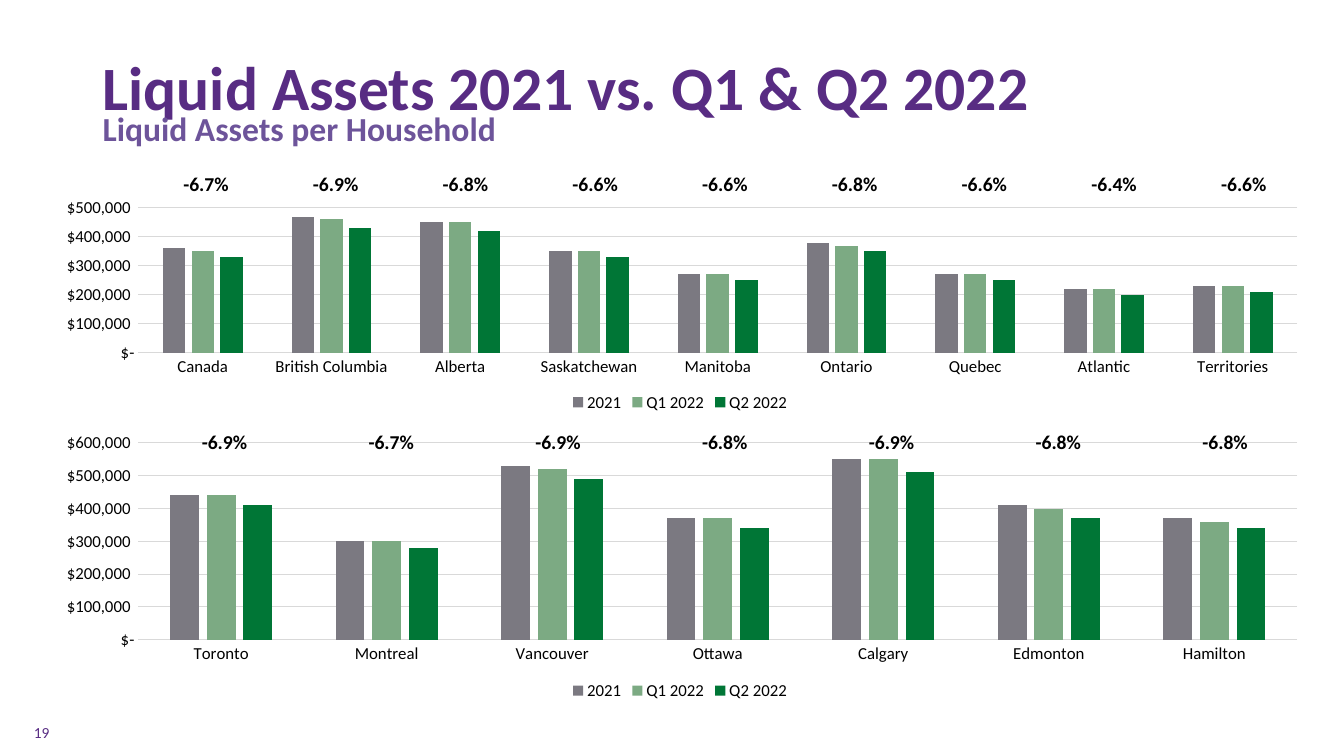
"""Build the slide comparing household liquid assets by region and by city."""
from dataclasses import dataclass

from pptx import Presentation
from pptx.chart import data
from pptx.dml import color
from pptx.enum import chart as charts, text
from pptx.util import Inches, Pt

FONT = "Calibri"
COLORS = {
    "title": "582C83",
    "subtitle": "6D549A",
    "text": "000000",
    "grid": "D9D9D9",
}
SERIES_COLORS = {"2021": "7B7981", "Q1 2022": "7CAA83", "Q2 2022": "007636"}
MONEY = '_-"$"* #,##0_-;\\-"$"* #,##0_-;_-"$"* "-"'
PLAIN_TABLE = "{2D5ABB26-0587-4C30-8999-92F81FD0307C}"
CHART_LEFT, CHART_WIDTH = 0.37, 12.75
TABLE_LEFT, TABLE_WIDTH, TABLE_HEIGHT = 1.4, 11.58, 0.41


@dataclass
class Place:
    """A category with its assets in thousands of dollars and its change."""
    name: str
    assets: tuple[int, int, int]
    change: str


@dataclass
class Panel:
    """A column chart with a row of changes above its columns."""
    chart_top: float
    chart_height: float
    table_top: float
    maximum: int
    places: list[Place]


PANELS = [
    Panel(4.24, 2.75, 4.22, 600000, [
        Place("Toronto", (440, 440, 410), "-6.9%"),
        Place("Montreal", (300, 300, 280), "-6.7%"),
        Place("Vancouver", (530, 520, 490), "-6.9%"),
        Place("Ottawa", (370, 370, 340), "-6.8%"),
        Place("Calgary", (550, 550, 510), "-6.9%"),
        Place("Edmonton", (410, 400, 370), "-6.8%"),
        Place("Hamilton", (370, 360, 340), "-6.8%"),
    ]),
    Panel(1.92, 2.21, 1.66, 500000, [
        Place("Canada", (360, 350, 330), "-6.7%"),
        Place("British Columbia", (470, 460, 430), "-6.9%"),
        Place("Alberta", (450, 450, 420), "-6.8%"),
        Place("Saskatchewan", (350, 350, 330), "-6.6%"),
        Place("Manitoba", (270, 270, 250), "-6.6%"),
        Place("Ontario", (380, 370, 350), "-6.8%"),
        Place("Quebec", (270, 270, 250), "-6.6%"),
        Place("Atlantic", (220, 220, 200), "-6.4%"),
        Place("Territories", (230, 230, 210), "-6.6%"),
    ]),
]


def rgb(name: str) -> color.RGBColor:
    """Return the named colour."""
    return color.RGBColor.from_string(COLORS[name])


def style_font(font, size: float, name: str, bold: bool = False) -> None:
    """Set the typeface, size, colour and weight of a font."""
    font.name, font.size, font.bold = FONT, Pt(size), bold
    font.color.rgb = rgb(name)


def style_line(line) -> None:
    """Give a chart line the thin grid look."""
    line.color.rgb = rgb("grid")
    line.width = Pt(0.75)


def add_columns(page, panel: Panel) -> None:
    """Draw the clustered columns of a panel."""
    chart_data = data.CategoryChartData()
    chart_data.categories = [place.name for place in panel.places]
    for index, name in enumerate(SERIES_COLORS):
        chart_data.add_series(name, [place.assets[index] * 1000 for place in panel.places])
    chart = page.shapes.add_chart(
        charts.XL_CHART_TYPE.COLUMN_CLUSTERED, Inches(CHART_LEFT), Inches(panel.chart_top),
        Inches(CHART_WIDTH), Inches(panel.chart_height), chart_data).chart
    chart.has_title = False
    style_font(chart.font, 12, "text")
    chart.has_legend = True
    chart.legend.position = charts.XL_LEGEND_POSITION.BOTTOM
    chart.legend.include_in_layout = False
    style_font(chart.legend.font, 12, "text")

    plot = chart.plots[0]
    plot.gap_width, plot.overlap, plot.vary_by_categories = 219, -27, False
    for series in plot.series:
        series.format.fill.solid()
        series.format.fill.fore_color.rgb = color.RGBColor.from_string(SERIES_COLORS[series.name])

    for axis in (chart.category_axis, chart.value_axis):
        axis.major_tick_mark = axis.minor_tick_mark = charts.XL_TICK_MARK.NONE
        style_font(axis.tick_labels.font, 12, "text")
    style_line(chart.category_axis.format.line)
    values = chart.value_axis
    values.minimum_scale, values.maximum_scale, values.major_unit = 0, panel.maximum, 100000
    values.format.line.fill.background()
    style_line(values.major_gridlines.format.line)
    values.tick_labels.number_format = MONEY
    values.tick_labels.number_format_is_linked = False


def add_changes(page, panel: Panel) -> None:
    """Draw the one-row table of percentage changes of a panel."""
    count = len(panel.places)
    table = page.shapes.add_table(
        1, count, Inches(TABLE_LEFT), Inches(panel.table_top),
        Inches(TABLE_WIDTH), Inches(TABLE_HEIGHT)).table
    table.first_row = table.horz_banding = False
    table._tbl.tblPr[0].text = PLAIN_TABLE
    for column, place in enumerate(panel.places):
        table.columns[column].width = Inches(TABLE_WIDTH / count)
        cell = table.cell(0, column)
        cell.fill.background()
        cell.text = place.change
        para = cell.text_frame.paragraphs[0]
        para.alignment = text.PP_ALIGN.CENTER
        style_font(para.font, 14, "text", bold=True)


def add_text(page, words: str, left: float, top: float, width: float, height: float):
    """Add a wrapping text box and return its shape."""
    box = page.shapes.add_textbox(Inches(left), Inches(top), Inches(width), Inches(height))
    box.text_frame.word_wrap = True
    box.text_frame.text = words
    return box


def main() -> None:
    """Build and save the deck."""
    deck = Presentation()
    deck.slide_width, deck.slide_height = Inches(13.33), Inches(7.5)
    page = deck.slides.add_slide(deck.slide_layouts[5])
    for panel in PANELS:
        add_columns(page, panel)

    title = page.shapes.title
    title.left, title.top = Inches(0.92), Inches(0.43)
    title.width, title.height = Inches(11.99), Inches(0.93)
    title.text_frame.text = "Liquid Assets 2021 vs. Q1 & Q2 2022"
    title.text_frame.vertical_anchor = text.MSO_ANCHOR.MIDDLE
    para = title.text_frame.paragraphs[0]
    para.alignment, para.line_spacing = text.PP_ALIGN.LEFT, 0.9
    style_font(para.font, 44, "title", bold=True)

    subtitle = add_text(page, "Liquid Assets per Household", 0.92, 1.02, 8.44, 0.5)
    style_font(subtitle.text_frame.paragraphs[0].font, 24, "subtitle", bold=True)

    number = add_text(page, "19", 0, 7.07, 0.59, 0.4)
    number.text_frame.vertical_anchor = text.MSO_ANCHOR.MIDDLE
    para = number.text_frame.paragraphs[0]
    para.alignment = text.PP_ALIGN.RIGHT
    style_font(para.font, 11, "title")

    for panel in PANELS:
        add_changes(page, panel)
    deck.save("out.pptx")


if __name__ == "__main__":
    main()
